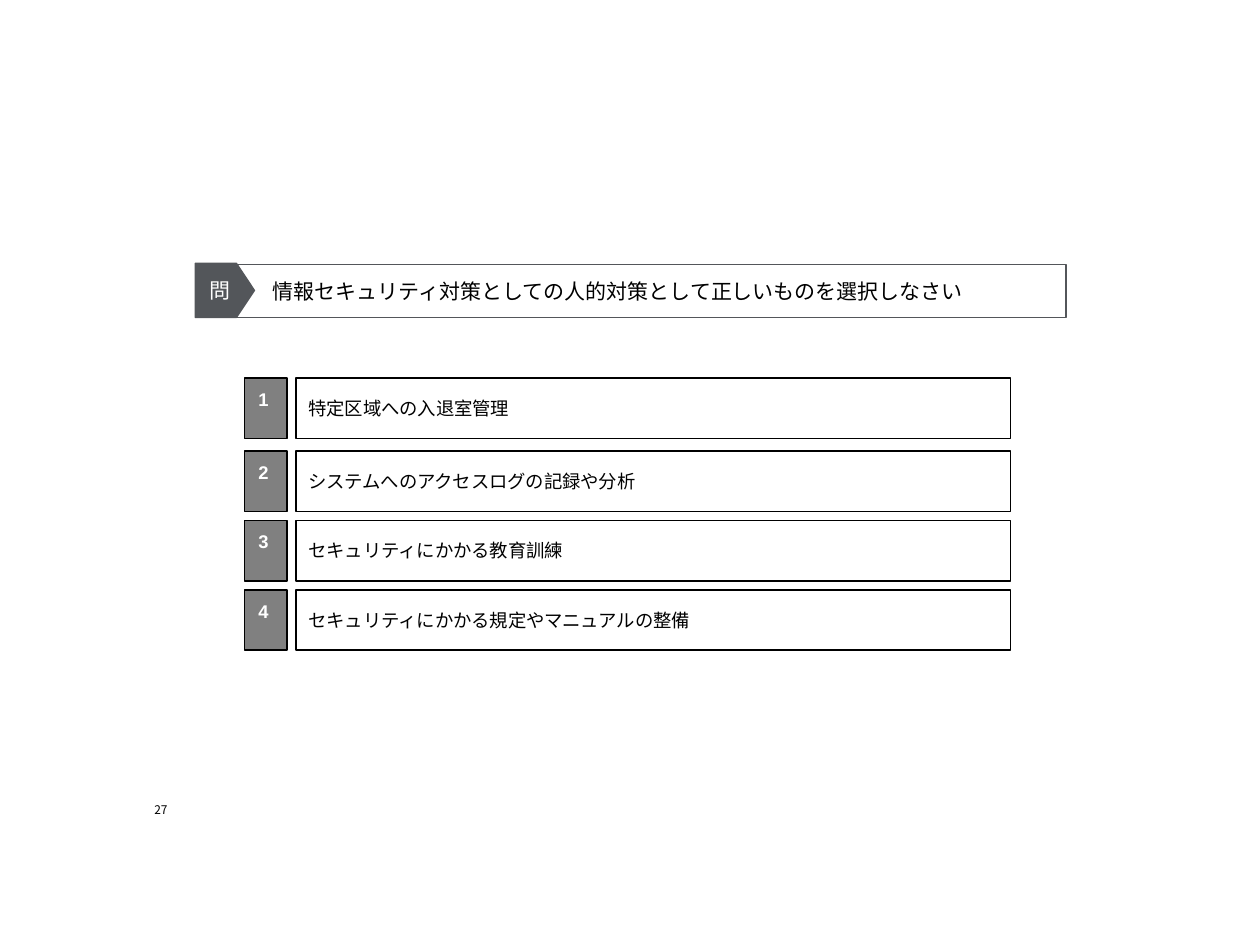
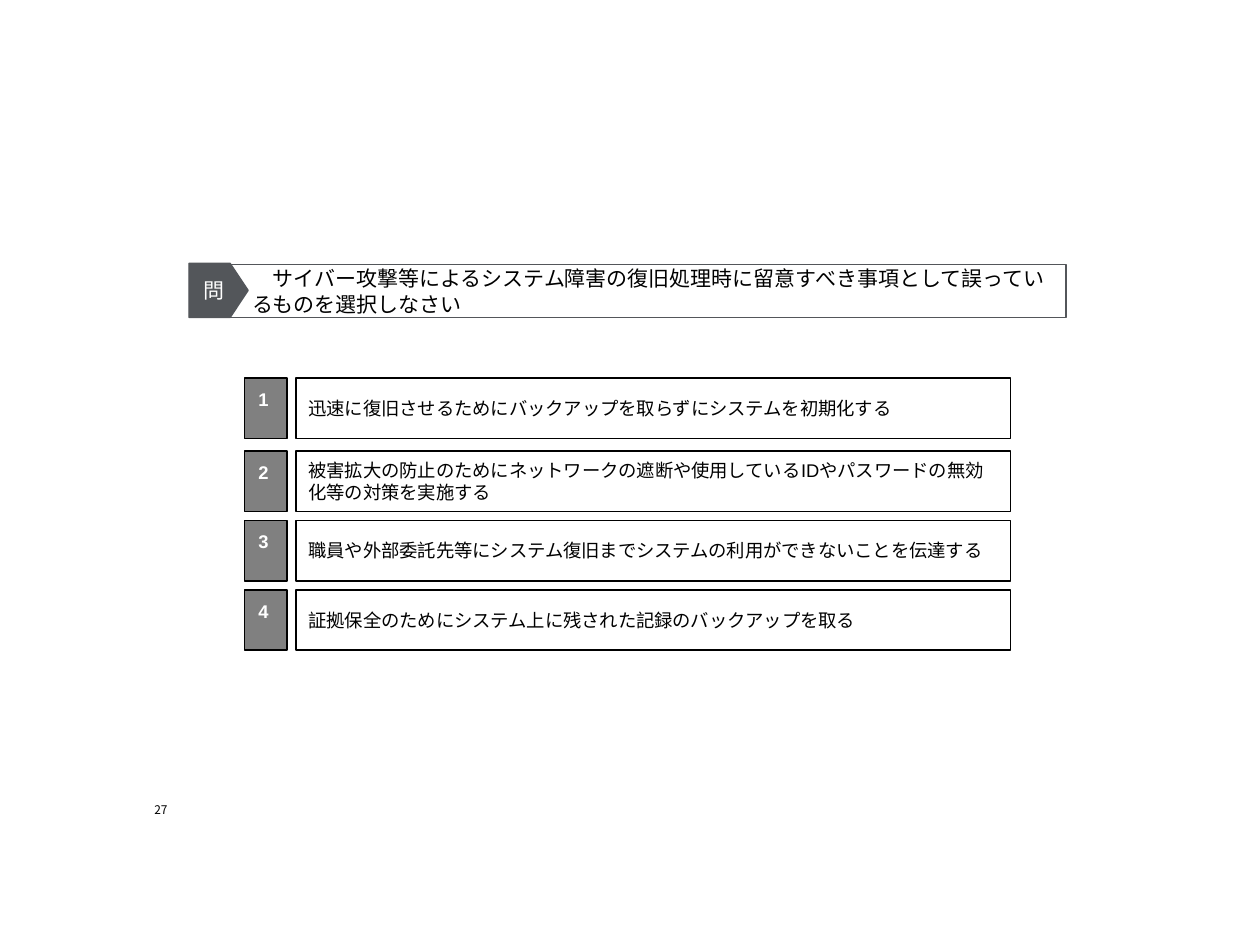
from lxml.etree import SubElement
from pptx import Presentation
from pptx.dml.color import RGBColor
from pptx.enum.shapes import MSO_SHAPE
from pptx.enum.text import MSO_ANCHOR, MSO_AUTO_SIZE, PP_ALIGN
from pptx.oxml.ns import qn
from pptx.util import Inches, Pt

# Content
PAGE_NUMBER = "27"
BADGE_TEXT = "問"
QUIZZES = [
    {
        "question": "情報セキュリティ対策としての人的対策として正しいものを選択しなさい",
        "badge_left": 1.55,
        "answers": [
            "特定区域への入退室管理",
            "システムへのアクセスログの記録や分析",
            "セキュリティにかかる教育訓練",
            "セキュリティにかかる規定やマニュアルの整備",
        ],
    },
    {
        "question": "サイバー攻撃等によるシステム障害の復旧処理時に留意すべき事項として誤っているものを選択しなさい",
        "badge_left": 1.5,
        "answers": [
            "迅速に復旧させるためにバックアップを取らずにシステムを初期化する",
            "被害拡大の防止のためにネットワークの遮断や使用しているIDやパスワードの無効化等の対策を実施する",
            "職員や外部委託先等にシステム復旧までシステムの利用ができないことを伝達する",
            "証拠保全のためにシステム上に残された記録のバックアップを取る",
        ],
    },
]

# Shared style
BLACK = RGBColor(0x00, 0x00, 0x00)
WHITE = RGBColor(0xFF, 0xFF, 0xFF)
SLATE = RGBColor(0x53, 0x56, 0x5A)
GRAY = RGBColor(0x80, 0x80, 0x80)
LATIN_FONT = "Arial"
JAPANESE_FONT = "Noto Sans CJK JP"

QUESTION_FONT = {"name": LATIN_FONT, "size": Pt(12), "bold": False}
BADGE_FONT = {"name": JAPANESE_FONT, "size": Pt(12)}
ANSWER_FONT = {"name": LATIN_FONT, "size": Pt(10.5)}
NUMBER_FONT = {"name": LATIN_FONT, "size": Pt(10.5), "bold": True}
PAGE_FONT = {"name": JAPANESE_FONT, "size": Pt(6.8)}

# Layout in inches
QUESTION_BOX = (1.79, 2.1, 6.67, 0.42)
BADGE_TOP, BADGE_WIDTH, BADGE_HEIGHT = 2.09, 0.47, 0.43
PAGE_BOX = (1.18, 6.34, 0.15, 0.14)
NUMBER_LEFT, NUMBER_WIDTH = 1.94, 0.34
ANSWER_LEFT, ANSWER_WIDTH = 2.35, 5.67
ROW_HEIGHT, ROW_PITCH = 0.48, 0.55
FIRST_ROW_TOP, SECOND_ROW_TOP = 3.0, 3.58
STANDARD_INSETS = (0.1, 0.05, 0.1, 0.05)


def paint(shape, fill, line, line_width=1):
    if fill is None:
        shape.fill.background()
    else:
        shape.fill.solid()
        shape.fill.fore_color.rgb = fill
    shape.line.color.rgb = line
    shape.line.width = Pt(line_width)


def write(shape, text, font_format, color=BLACK, align=PP_ALIGN.LEFT,
          anchor=MSO_ANCHOR.MIDDLE, insets=STANDARD_INSETS, wrap=True):
    frame = shape.text_frame
    frame.auto_size = MSO_AUTO_SIZE.NONE
    frame.word_wrap = wrap
    frame.vertical_anchor = anchor
    for side, inset in zip(("left", "top", "right", "bottom"), insets):
        setattr(frame, f"margin_{side}", Inches(inset))
    paragraph = frame.paragraphs[0]
    paragraph.alignment = align
    run = paragraph.add_run()
    run.text = text
    for attribute, value in font_format.items():
        setattr(run.font, attribute, value)
    run.font.color.rgb = color
    east_asian = SubElement(run.font._element, qn("a:ea"))
    east_asian.set("typeface", JAPANESE_FONT)
    return paragraph


def add_block(slide, preset, box, fill, line, line_width=1):
    shape = slide.shapes.add_shape(preset, *map(Inches, box))
    shape.shadow.inherit = False
    paint(shape, fill, line, line_width)
    return shape


def add_question(slide, question, badge_left):
    title = slide.shapes.title
    title.left, title.top, title.width, title.height = map(Inches, QUESTION_BOX)
    paint(title, WHITE, SLATE)
    paragraph = write(title, question, QUESTION_FONT,
                      insets=(0.21, 0.03, 0.03, 0.03))
    # First line starts one character in, clear of the badge
    paragraph._p.get_or_add_pPr().set("indent", str(Pt(12)))

    badge = add_block(slide, MSO_SHAPE.PENTAGON,
                      (badge_left, BADGE_TOP, BADGE_WIDTH, BADGE_HEIGHT),
                      SLATE, SLATE, 0.75)
    badge.adjustments[0] = 0.332
    write(badge, BADGE_TEXT, BADGE_FONT, WHITE, PP_ALIGN.CENTER, wrap=False)


def add_answer(slide, index, answer):
    # The first gap is slightly wider than the others
    top = SECOND_ROW_TOP + (index - 1) * ROW_PITCH if index else FIRST_ROW_TOP
    answer_box = add_block(slide, MSO_SHAPE.RECTANGLE,
                           (ANSWER_LEFT, top, ANSWER_WIDTH, ROW_HEIGHT), None, BLACK)
    write(answer_box, answer, ANSWER_FONT)
    number_box = add_block(slide, MSO_SHAPE.RECTANGLE,
                           (NUMBER_LEFT, top, NUMBER_WIDTH, ROW_HEIGHT), GRAY, BLACK)
    write(number_box, str(index + 1), NUMBER_FONT, WHITE, PP_ALIGN.CENTER,
          MSO_ANCHOR.TOP, insets=(0.08, 0.08, 0.12, 0.05))


def add_page_number(slide):
    box = slide.shapes.add_textbox(*map(Inches, PAGE_BOX))
    write(box, PAGE_NUMBER, PAGE_FONT, align=PP_ALIGN.RIGHT,
          anchor=MSO_ANCHOR.BOTTOM, insets=(0, 0, 0, 0), wrap=False)


def main():
    presentation = Presentation()
    presentation.slide_width, presentation.slide_height = Inches(10), Inches(7.5)
    title_only = presentation.slide_layouts[5]
    for quiz in QUIZZES:
        slide = presentation.slides.add_slide(title_only)
        add_page_number(slide)
        add_question(slide, quiz["question"], quiz["badge_left"])
        for index, answer in enumerate(quiz["answers"]):
            add_answer(slide, index, answer)
    presentation.save("out.pptx")


if __name__ == "__main__":
    main()
